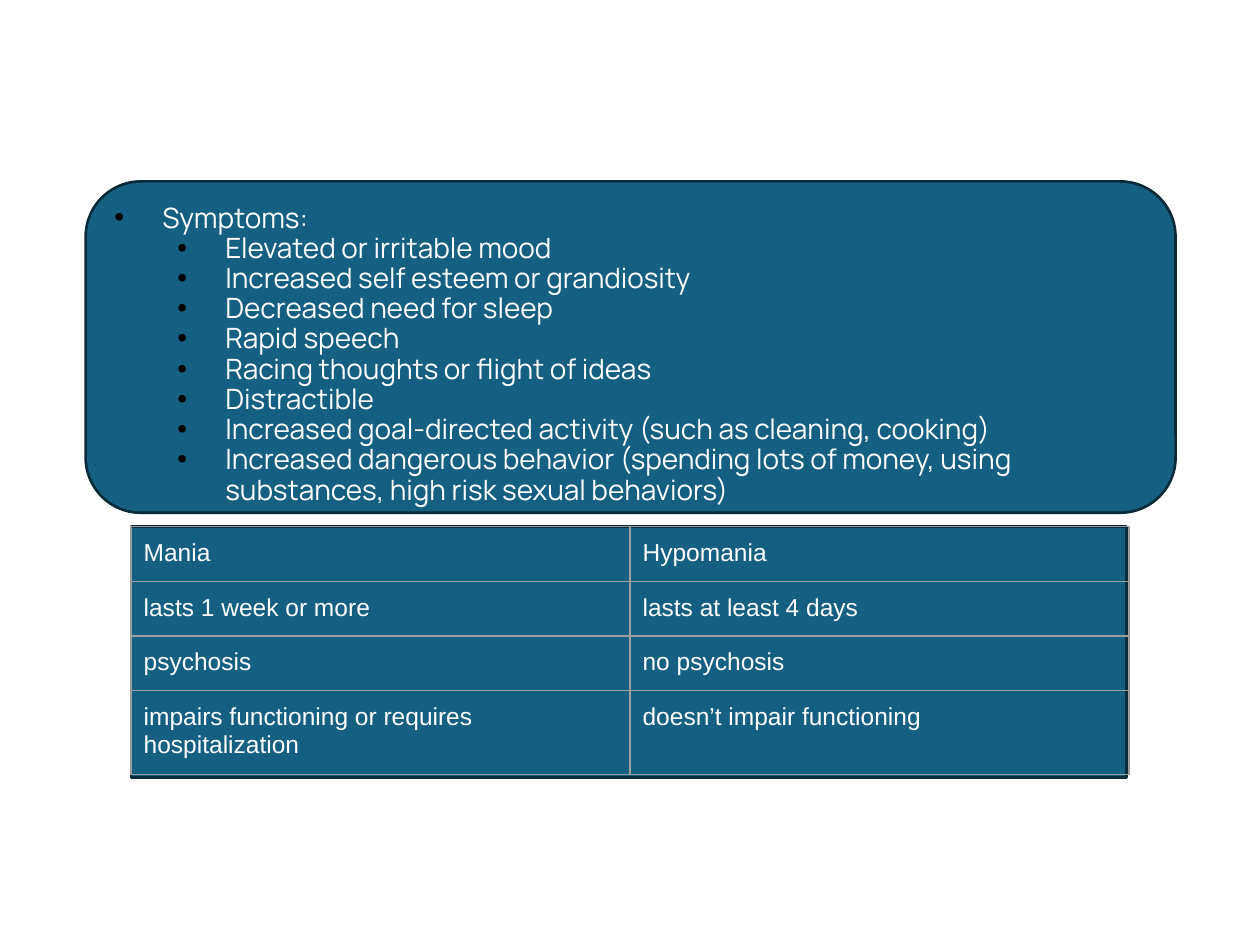
from dataclasses import dataclass

from lxml import etree
from pptx import Presentation
from pptx import util as u
from pptx.dml.color import RGBColor
from pptx.enum import shapes, text
from pptx.oxml import ns


@dataclass(frozen=True)
class Theme:
    panel: str = "156082"
    outline: str = "092A39"
    ink: str = "FFFFFF"
    bullet: str = "000000"
    grid: str = "9E9E9E"
    body_font: str = "Manrope"
    table_font: str = "Arial"
    body_size: float = 16
    table_size: float = 14
    outline_width: float = 1.5
    grid_width: float = 0.75


SYMPTOMS = [
    "Elevated or irritable mood",
    "Increased self esteem or grandiosity",
    "Decreased need for sleep",
    "Rapid speech",
    "Racing thoughts or flight of ideas",
    "Distractible",
    "Increased goal-directed activity (such as cleaning, cooking)",
    "Increased dangerous behavior (spending lots of money, using "
    "substances, high risk sexual behaviors)",
]
COMPARISON = [
    ("Mania", "Hypomania"),
    ("lasts 1 week or more", "lasts at least 4 days"),
    ("psychosis", "no psychosis"),
    ("impairs functioning or requires hospitalization", "doesn’t impair functioning"),
]


def add_element(parent, tag, **attributes):
    return etree.SubElement(parent, ns.qn(tag), attributes)


def write_text(para, wording, *, font, size, color):
    span = para.add_run()
    span.text = wording
    span.font.name = font
    span.font.size = u.Pt(size)
    span.font.color.rgb = RGBColor.from_string(color)


class SlideBuilder:
    def __init__(self, slide, theme):
        self.slide = slide
        self.theme = theme

    def panel(self, kind, left, top, width, height):
        shape = self.slide.shapes.add_shape(
            kind, u.Inches(left), u.Inches(top), u.Inches(width), u.Inches(height))
        shape.shadow.inherit = False
        shape.fill.solid()
        shape.fill.fore_color.rgb = RGBColor.from_string(self.theme.panel)
        shape.line.color.rgb = RGBColor.from_string(self.theme.outline)
        shape.line.width = u.Pt(self.theme.outline_width)

    def bullets(self, entries, left, top, width, height):
        box = self.slide.shapes.add_textbox(
            u.Inches(left), u.Inches(top), u.Inches(width), u.Inches(height))
        frame = box.text_frame
        frame.word_wrap = True
        frame.vertical_anchor = text.MSO_ANCHOR.TOP
        for index, (level, wording) in enumerate(entries):
            para = frame.add_paragraph() if index else frame.paragraphs[0]
            self.mark_bullet(para, level)
            para.line_spacing = 0.9
            write_text(para, wording, font=self.theme.body_font,
                       size=self.theme.body_size, color=self.theme.ink)

    def mark_bullet(self, para, level):
        para.level = level
        properties = para._p.get_or_add_pPr()
        properties.set("marL", str(u.Inches(0.5 * (level + 1))))
        properties.set("indent", str(u.Inches(-0.38)))
        color = add_element(properties, "a:buClr")
        add_element(color, "a:srgbClr", val=self.theme.bullet)
        add_element(properties, "a:buFont", typeface="Arial")
        add_element(properties, "a:buChar", char="•")

    def table(self, rows, left, top, width, row_height):
        columns = len(rows[0])
        grid = self.slide.shapes.add_table(
            len(rows), columns, u.Inches(left), u.Inches(top),
            u.Inches(width), u.Inches(row_height * len(rows))).table
        grid.first_row = grid.horz_banding = False
        for column in grid.columns:
            column.width = u.Inches(width / columns)
        for row, wordings in zip(grid.rows, rows):
            row.height = u.Inches(row_height)
            for cell, wording in zip(row.cells, wordings):
                self.fill_cell(cell, wording)

    def fill_cell(self, cell, wording):
        cell.margin_left = cell.margin_right = u.Inches(0.1)
        cell.margin_top = cell.margin_bottom = u.Inches(0.1)
        write_text(cell.text_frame.paragraphs[0], wording, font=self.theme.table_font,
                   size=self.theme.table_size, color=self.theme.ink)
        properties = cell._tc.get_or_add_tcPr()
        for side in ("a:lnL", "a:lnR", "a:lnT", "a:lnB"):
            border = add_element(properties, side, w=str(u.Pt(self.theme.grid_width)))
            fill = add_element(border, "a:solidFill")
            add_element(fill, "a:srgbClr", val=self.theme.grid)
        cell.fill.background()


def main():
    deck = Presentation()
    deck.slide_width, deck.slide_height = u.Inches(10), u.Inches(7.5)
    page = SlideBuilder(deck.slides.add_slide(deck.slide_layouts[6]), Theme())
    page.panel(shapes.MSO_SHAPE.RECTANGLE, 1.04, 4.18, 7.9, 1.99)
    page.panel(shapes.MSO_SHAPE.ROUNDED_RECTANGLE, 0.68, 1.44, 8.65, 2.63)
    entries = [(0, "Symptoms:")] + [(1, symptom) for symptom in SYMPTOMS]
    page.bullets(entries, 0.69, 1.57, 8.62, 4.76)
    page.table(COMPARISON, 1.04, 4.18, 7.92, 0.42)
    deck.save("out.pptx")


if __name__ == "__main__":
    main()
